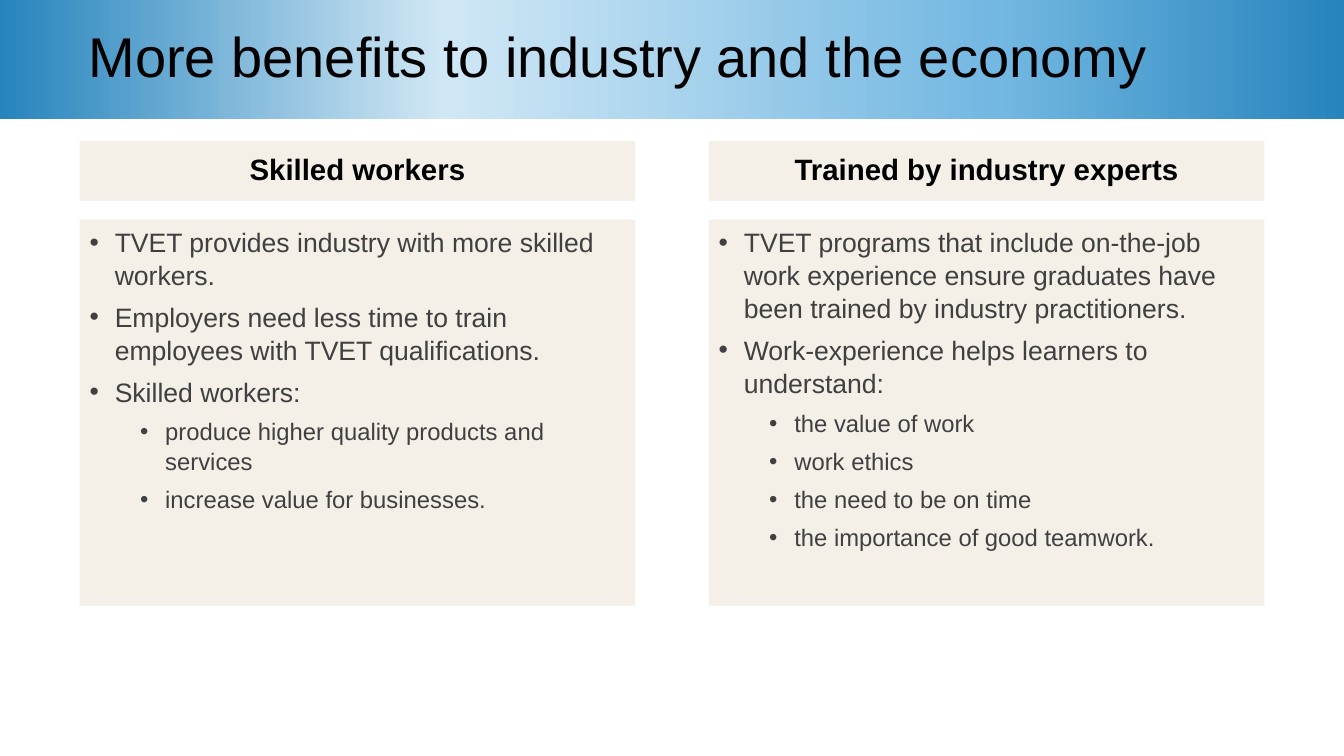
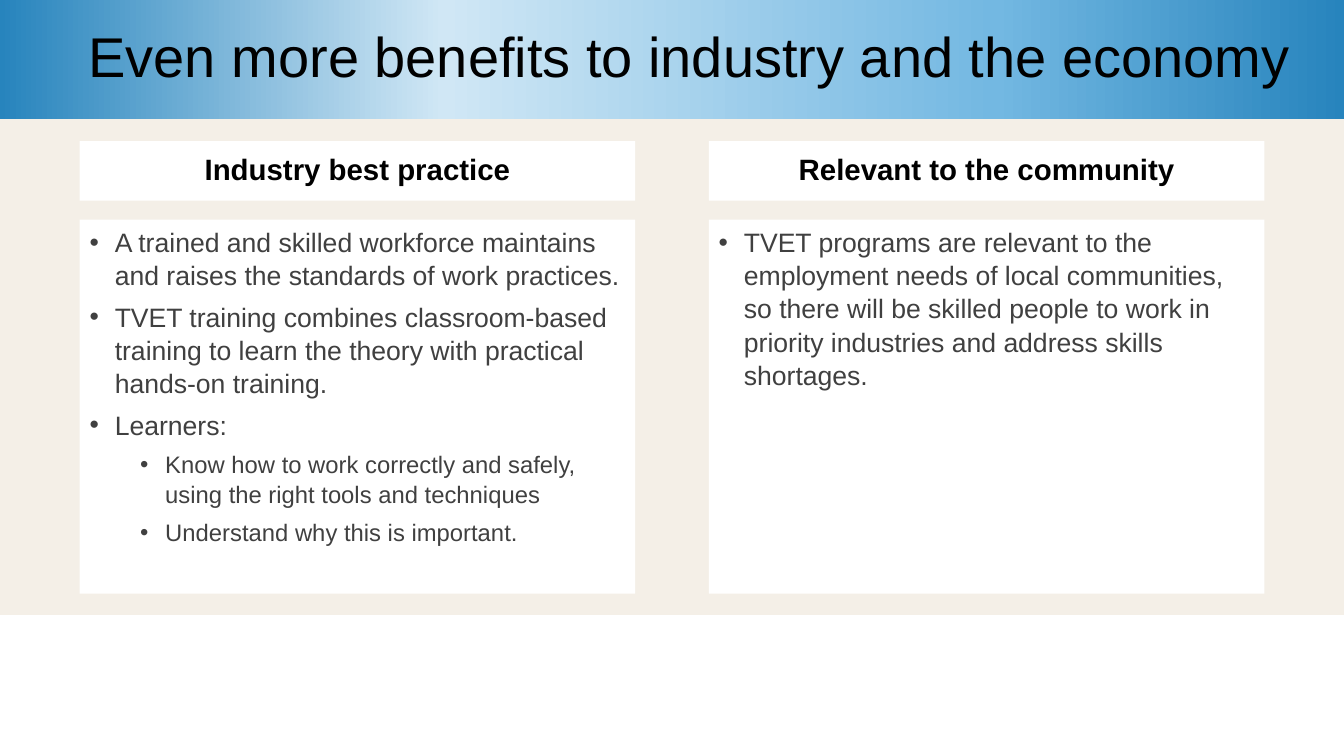
"""Build two slides on the benefits of TVET to industry and the economy."""
from dataclasses import dataclass

from lxml.etree import SubElement
from pptx import Presentation
from pptx.dml.color import RGBColor
from pptx.enum.shapes import MSO_SHAPE as Shape
from pptx.enum.text import MSO_ANCHOR as Anchor, PP_ALIGN as Align
from pptx.oxml.ns import qn
from pptx.util import Pt

SCALE = 9144
WIDTH, HEIGHT = 1333, 750
BAND_HEIGHT = 118
MARGIN, COLUMN_WIDTH = 79, 551
COLUMNS = (MARGIN, WIDTH - MARGIN - COLUMN_WIDTH)
HEADING_TOP, HEADING_HEIGHT = 140, 59
BODY_TOP = 218


def px(length):
    return length * SCALE


@dataclass(frozen=True)
class Theme:
    font: str = "Arial"
    ink: str = "000000"
    body_ink: str = "404040"
    sand: str = "F4EFE7"
    white: str = "FFFFFF"
    band: tuple = ((0, "2784BD"), (33, "D0E7F5"), (74, "73B8E2"), (100, "2784BD"))
    title_size: int = 40
    heading_size: int = 21
    bullet_sizes: tuple = (19, 17)


THEME = Theme()


def write(para, text, *, size, color=THEME.ink, bold=False, align=Align.LEFT,
          spacing=0.9, after=0, left=0, hanging=0, bullet=None):
    props = para._p.get_or_add_pPr()
    props.set("marL", str(px(left)))
    props.set("indent", str(px(-hanging)))
    para.alignment = align
    para.line_spacing = spacing
    para.space_before = Pt(0)
    para.space_after = Pt(after)
    if bullet:
        SubElement(props, qn("a:buFont"), typeface=THEME.font)
        SubElement(props, qn("a:buChar"), char=bullet)
    span = para.add_run()
    span.text = text
    span.font.name = THEME.font
    span.font.size = Pt(size)
    span.font.bold = bold
    span.font.color.rgb = RGBColor.from_string(color)


class Deck:
    def __init__(self):
        self.show = Presentation()
        self.show.slide_width, self.show.slide_height = px(WIDTH), px(HEIGHT)
        self.page = None

    def add_page(self):
        self.page = self.show.slides.add_slide(self.show.slide_layouts[6])

    def panel(self, left, top, width, height, fill=None, anchor=Anchor.MIDDLE):
        box = self.page.shapes.add_shape(
            Shape.RECTANGLE, px(left), px(top), px(width), px(height))
        box.shadow.inherit = False
        box.line.fill.background()
        if fill:
            box.fill.solid()
            box.fill.fore_color.rgb = RGBColor.from_string(fill)
        box.text_frame.word_wrap = True
        box.text_frame.vertical_anchor = anchor
        return box

    def title(self, text):
        box = self.panel(0, 0, WIDTH, BAND_HEIGHT)
        box.fill.gradient()
        box.fill.gradient_angle = 0
        stops = box._element.spPr.find(".//" + qn("a:gsLst"))
        stops.clear()
        for percent, color in THEME.band:
            stop = SubElement(stops, qn("a:gs"), pos=str(percent * 1000))
            SubElement(stop, qn("a:srgbClr"), val=color)
        write(box.text_frame.paragraphs[0], text, size=THEME.title_size, left=78)

    def heading(self, left, text, fill):
        box = self.panel(left, HEADING_TOP, COLUMN_WIDTH, HEADING_HEIGHT, fill)
        write(box.text_frame.paragraphs[0], text, size=THEME.heading_size,
              bold=True, align=Align.CENTER)

    def bullets(self, left, height, items, fill):
        frame = self.panel(left, BODY_TOP, COLUMN_WIDTH, height, fill,
                           Anchor.TOP).text_frame
        for index, (level, text) in enumerate(items):
            para = frame.add_paragraph() if index else frame.paragraphs[0]
            para.level = level
            write(para, text, size=THEME.bullet_sizes[level], color=THEME.body_ink,
                  spacing=1.04, after=6, left=25 + 50 * level, hanging=25, bullet="•")

    def comparison(self, title, columns, body_height, fill, backdrop_height=0):
        self.add_page()
        if backdrop_height:
            self.panel(0, BAND_HEIGHT, WIDTH, backdrop_height, THEME.sand)
        self.title(title)
        for left, (heading, items) in zip(COLUMNS, columns):
            self.heading(left, heading, fill)
            self.bullets(left, body_height, items, fill)


def main():
    deck = Deck()
    deck.comparison("More benefits to industry and the economy", [
        ("Skilled workers", [
            (0, "TVET provides industry with more skilled workers."),
            (0, "Employers need less time to train employees with TVET qualifications."),
            (0, "Skilled workers:"),
            (1, "produce higher quality products and services"),
            (1, "increase value for businesses."),
        ]),
        ("Trained by industry experts", [
            (0, "TVET programs that include on-the-job work experience ensure "
                "graduates have been trained by industry practitioners."),
            (0, "Work-experience helps learners to understand:"),
            (1, "the value of work"),
            (1, "work ethics"),
            (1, "the need to be on time"),
            (1, "the importance of good teamwork."),
        ]),
    ], body_height=383, fill=THEME.sand)
    deck.comparison("Even more benefits to industry and the economy", [
        ("Industry best practice", [
            (0, "A trained and skilled workforce maintains and raises the "
                "standards of work practices."),
            (0, "TVET training combines classroom-based training to learn the "
                "theory with practical hands-on training."),
            (0, "Learners:"),
            (1, "Know how to work correctly and safely, using the right tools "
                "and techniques"),
            (1, "Understand why this is important."),
        ]),
        ("Relevant to the community", [
            (0, "TVET programs are relevant to the employment needs of local "
                "communities, so there will be skilled people to work in "
                "priority industries and address skills shortages."),
        ]),
    ], body_height=371, fill=THEME.white, backdrop_height=492)
    deck.show.save("out.pptx")


if __name__ == "__main__":
    main()
